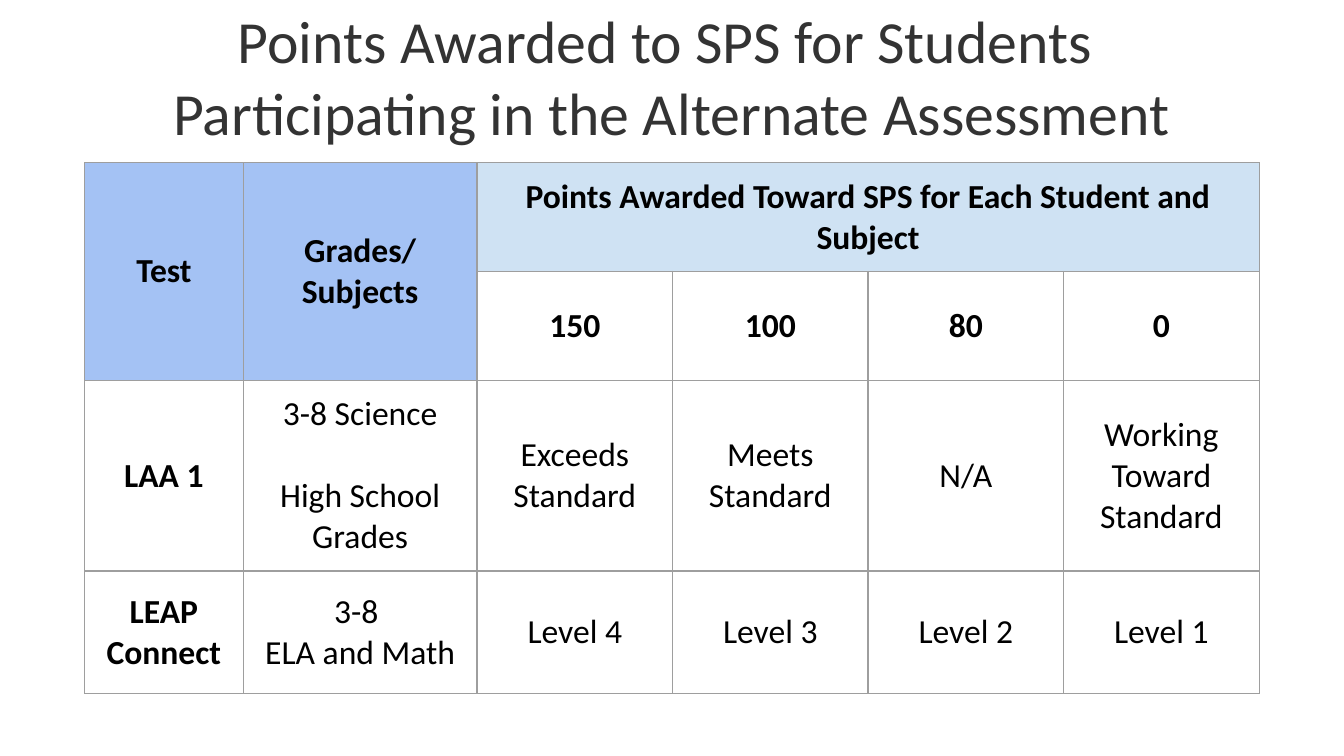
from lxml.etree import SubElement as Sub
from pptx import Presentation
from pptx.dml.color import RGBColor as RGB
from pptx.enum.text import MSO_ANCHOR as Anchor, PP_ALIGN as Align
from pptx.oxml.ns import qn
from pptx.util import Inches, Pt

FONT = "Calibri"
PAD = Inches(0.1)
COLORS = {"title": "333333", "text": "000000", "head": "A4C2F4",
          "band": "CFE2F3", "rule": "9E9E9E"}
WIDTH = 8.74
HEADS = [1.18, 1.74]
COLS = HEADS + [(WIDTH - sum(HEADS)) / 4] * 4
ROWS = [0.81, 0.81, 1.42, 0.91]
CELLS = [
    ["Test", "Grades/ Subjects",
     "Points Awarded Toward SPS for Each Student and Subject", "", "", ""],
    ["", "", "150", "100", "80", "0"],
    ["LAA 1", "3-8 Science\nHigh School Grades", "Exceeds Standard",
     "Meets Standard", "N/A", "Working Toward Standard"],
    ["LEAP Connect", "3-8 \nELA and Math",
     "Level 4", "Level 3", "Level 2", "Level 1"],
]
FILLS = {(0, 0): "head", (0, 1): "head", (0, 2): "band"}
MERGES = [((0, 0), (1, 0)), ((0, 1), (1, 1)), ((0, 2), (0, 5))]


def style(frame, size, color, bold=False):
    """Centre the text and format its runs."""
    for para in frame.paragraphs:
        para.alignment = Align.CENTER
        for run in para.runs:
            font = run.font
            font.name, font.size, font.bold = FONT, Pt(size), bold
            font.color.rgb = RGB.from_string(COLORS[color])


def add_title(slide, left, top, width, height):
    box = slide.shapes.add_textbox(left, top, width, height)
    frame = box.text_frame
    frame.word_wrap = True
    frame.vertical_anchor = Anchor.MIDDLE
    frame.margin_left = frame.margin_right = PAD
    frame.margin_top = frame.margin_bottom = PAD
    frame.text = ("Points Awarded to SPS for Students \n"
                  "Participating in the Alternate Assessment")
    style(frame, 32, "title")


def add_rules(cell):
    """Draw a thin line on each side of a cell."""
    props = cell._tc.get_or_add_tcPr()
    for i, side in enumerate(("lnL", "lnR", "lnT", "lnB")):
        line = props.makeelement(qn("a:" + side), {"w": str(Pt(0.75))})
        fill = Sub(line, qn("a:solidFill"))
        Sub(fill, qn("a:srgbClr"), val=COLORS["rule"])
        props.insert(i, line)


def fill_cell(cell, row, col, text):
    cell.vertical_anchor = Anchor.MIDDLE
    cell.margin_left = cell.margin_right = PAD
    cell.margin_top = cell.margin_bottom = PAD
    if (row, col) in FILLS:
        cell.fill.solid()
        cell.fill.fore_color.rgb = RGB.from_string(COLORS[FILLS[row, col]])
    else:
        cell.fill.background()
    add_rules(cell)
    if text:
        cell.text_frame.text = text
        style(cell.text_frame, 18, "text", bold=row < 2 or col == 0)


def add_points(slide, left, top, width, height):
    frame = slide.shapes.add_table(len(ROWS), len(COLS),
                                   left, top, width, height)
    table = frame.table
    table.first_row = table.horz_banding = False
    for col, size in zip(table.columns, COLS):
        col.width = Inches(size)
    for row, size in zip(table.rows, ROWS):
        row.height = Inches(size)
    for r, texts in enumerate(CELLS):
        for c, text in enumerate(texts):
            fill_cell(table.cell(r, c), r, c, text)
    for start, end in MERGES:
        table.cell(*start).merge(table.cell(*end))
    # One line of space between the two grade groups
    table.cell(2, 1).text_frame.paragraphs[1].space_before = Pt(22)


def main():
    deck = Presentation()
    deck.slide_width = Inches(10)
    deck.slide_height = deck.slide_width * 9 // 16
    slide = deck.slides.add_slide(deck.slide_layouts[6])
    add_title(slide, 0, 0, deck.slide_width, Inches(1.13))
    add_points(slide, Inches(0.63), Inches(1.21),
               Inches(WIDTH), Inches(sum(ROWS)))
    deck.save("out.pptx")


if __name__ == "__main__":
    main()
